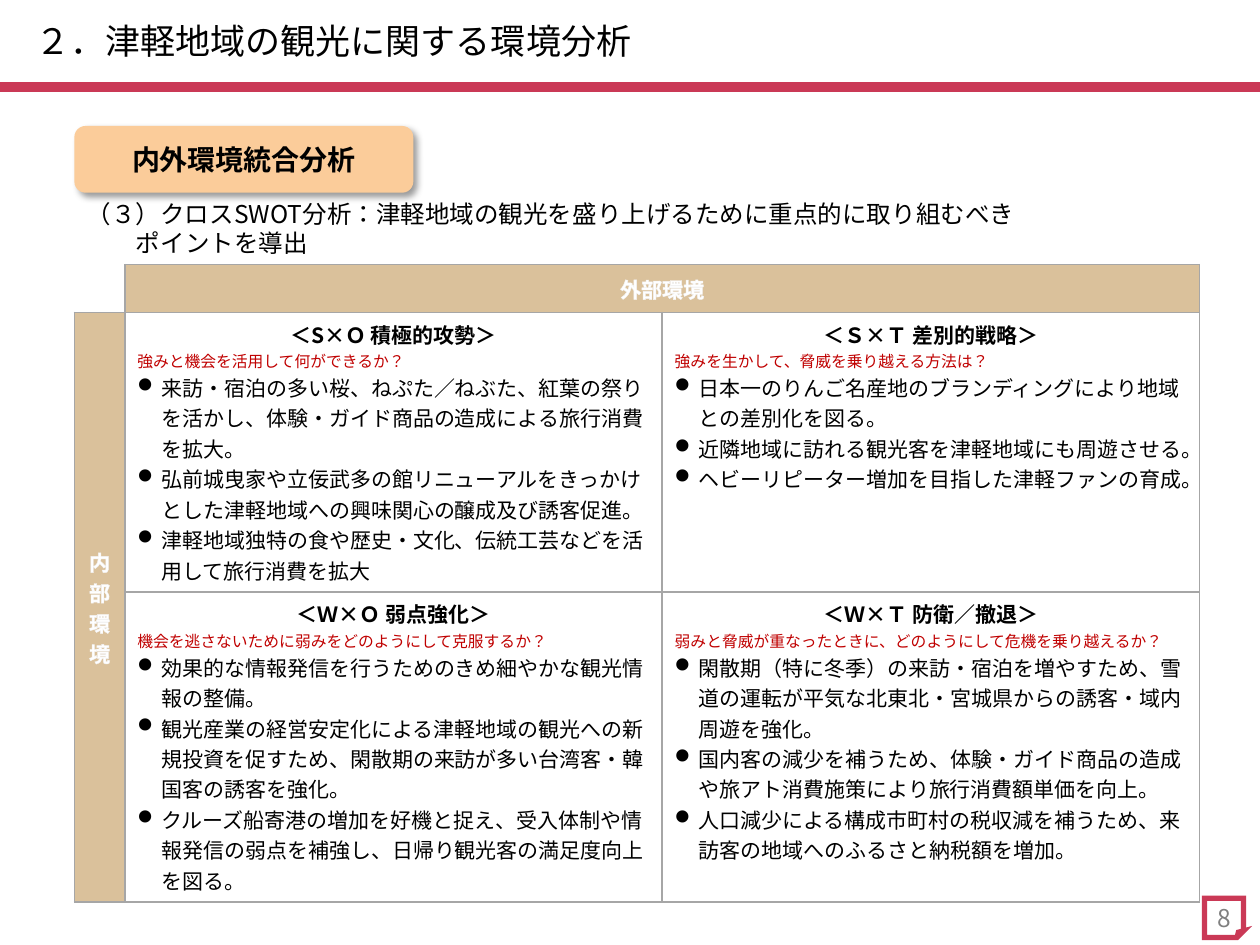
from lxml import etree
from pptx import Presentation
from pptx.dml.color import RGBColor
from pptx.enum.shapes import MSO_CONNECTOR, MSO_SHAPE
from pptx.enum.text import MSO_ANCHOR, PP_ALIGN
from pptx.oxml.ns import qn
from pptx.util import Inches, Pt

CENTER, LEFT = PP_ALIGN.CENTER, PP_ALIGN.LEFT
MIDDLE, TOP = MSO_ANCHOR.MIDDLE, MSO_ANCHOR.TOP
ROUNDED, FOLDED = MSO_SHAPE.ROUNDED_RECTANGLE, MSO_SHAPE.FOLDED_CORNER
STRAIGHT = MSO_CONNECTOR.STRAIGHT
FONT = "Noto Sans CJK JP"
RED, TAN, GREY = "CA3956", "DAC19B", "A6A6A6"

# Each quadrant: heading, question, points
QUADRANTS = [
    [("＜S×Ｏ 積極的攻勢＞", "強みと機会を活用して何ができるか？", [
        "来訪・宿泊の多い桜、ねぷた／ねぶた、紅葉の祭りを活かし、体験・ガイド商品の造成による旅行消費を拡大。",
        "弘前城曳家や立佞武多の館リニューアルをきっかけとした津軽地域への興味関心の醸成及び誘客促進。",
        "津軽地域独特の食や歴史・文化、伝統工芸などを活用して旅行消費を拡大"]),
     ("＜Ｓ×Ｔ 差別的戦略＞", "強みを生かして、脅威を乗り越える方法は？", [
         "日本一のりんご名産地のブランディングにより地域との差別化を図る。",
         "近隣地域に訪れる観光客を津軽地域にも周遊させる。",
         "ヘビーリピーター増加を目指した津軽ファンの育成。"])],
    [("＜Ｗ×Ｏ 弱点強化＞", "機会を逃さないために弱みをどのようにして克服するか？", [
        "効果的な情報発信を行うためのきめ細やかな観光情報の整備。",
        "観光産業の経営安定化による津軽地域の観光への新規投資を促すため、閑散期の来訪が多い台湾客・韓国客の誘客を強化。",
        "クルーズ船寄港の増加を好機と捉え、受入体制や情報発信の弱点を補強し、日帰り観光客の満足度向上を図る。"]),
     ("＜Ｗ×Ｔ 防衛／撤退＞", "弱みと脅威が重なったときに、どのようにして危機を乗り越えるか？", [
         "閑散期（特に冬季）の来訪・宿泊を増やすため、雪道の運転が平気な北東北・宮城県からの誘客・域内周遊を強化。",
         "国内客の減少を補うため、体験・ガイド商品の造成や旅アト消費施策により旅行消費額単価を向上。",
         "人口減少による構成市町村の税収減を補うため、来訪客の地域へのふるさと納税額を増加。"])],
]


def color(value):
    return RGBColor.from_string(value)


def add_xml(parent, tag, **attributes):
    return etree.SubElement(parent, qn(tag), attributes)


def add_line(parent, tag, value, points):
    line = add_xml(parent, tag, w=str(Pt(points)))
    add_xml(add_xml(line, "a:solidFill"), "a:srgbClr", val=value)


def write(para, text, size, value="000000", bold=False, align=LEFT, outline=None):
    para.text = text
    para.alignment = align
    font = para.font
    if outline:
        add_line(font._element, "a:ln", outline, 0.25)
    font.size, font.bold, font.name = Pt(size), bold, FONT
    font.color.rgb = color(value)
    add_xml(font._element, "a:ea", typeface=FONT)
    for span in para.runs:
        properties = span._r.get_or_add_rPr()
        properties.set("lang", "ja-JP")
        properties.set("altLang", "en-US")


def set_indent(para, left, first=0):
    properties = para._p.get_or_add_pPr()
    properties.set("marL", str(Inches(left)))
    properties.set("indent", str(Inches(first)))
    return properties


def add_text_box(page, box):
    frame = page.shapes.add_textbox(*map(Inches, box)).text_frame
    frame.word_wrap = True
    return frame


def add_title(page, box, text):
    title = page.shapes.title
    title.left, title.top, title.width, title.height = map(Inches, box)
    title.text_frame.vertical_anchor = MIDDLE
    para = title.text_frame.paragraphs[0]
    para.line_spacing = 0.9
    write(para, text, 20)


def add_rule(page, top, width):
    rule = page.shapes.add_connector(STRAIGHT, 0, Inches(top), Inches(width), Inches(top))
    rule.line.color.rgb, rule.line.width = color(RED), Pt(6)
    add_xml(rule._element.spPr, "a:effectLst")


def add_page_number(page, icon_box, text_box, number):
    icon = page.shapes.add_shape(FOLDED, *map(Inches, icon_box))
    icon.shadow.inherit = False
    icon.fill.background()
    icon.line.color.rgb, icon.line.width = color(RED), Pt(3)
    add_xml(icon._element.spPr.find(qn("a:ln")), "a:miter", lim="800000")
    frame = add_text_box(page, text_box)
    frame.vertical_anchor = MIDDLE
    write(frame.paragraphs[0], number, 14, "808080", align=CENTER)


def add_section_label(page, box, text):
    label = page.shapes.add_shape(ROUNDED, *map(Inches, box))
    label.fill.solid()
    label.fill.fore_color.rgb = color("FBCC9A")
    label.line.fill.background()
    label.shadow.inherit = False
    effects = label._element.spPr.find(qn("a:effectLst"))
    shadow = add_xml(effects, "a:outerShdw", blurRad=str(Pt(4)), dist=str(Pt(3)),
                     dir=str(45 * 60000), algn="tl", rotWithShape="0")
    add_xml(add_xml(shadow, "a:srgbClr", val="000000"), "a:alpha", val="40000")
    label.text_frame.vertical_anchor = MIDDLE
    write(label.text_frame.paragraphs[0], text, 16, bold=True, align=CENTER)


def add_lead(page, box, first, second):
    frame = add_text_box(page, box)
    write(frame.paragraphs[0], first, 14)
    para = frame.add_paragraph()
    set_indent(para, 0.39)
    write(para, second, 14)


def style_cell(cell, fill=None, outer=GREY):
    properties = cell._tc.get_or_add_tcPr()
    for tag, value in (("a:lnL", outer), ("a:lnR", GREY), ("a:lnT", outer), ("a:lnB", GREY)):
        add_line(properties, tag, value, 1)
    if fill:
        cell.fill.solid()
        cell.fill.fore_color.rgb = color(fill)
    else:
        cell.fill.background()
    cell.text_frame.paragraphs[0].font.size = Pt(12)
    add_xml(cell.text_frame.paragraphs[0]._p, "a:endParaRPr", sz="1200")


def fill_axis(cell, text):
    cell.vertical_anchor = MIDDLE
    write(cell.text_frame.paragraphs[0], text, 12, "FFFFFF", True, CENTER, outline="F2F2F2")


def turn_vertical(cell):
    cell._tc.get_or_add_tcPr().set("vert", "eaVert")
    cell._tc.txBody.find(qn("a:bodyPr")).set("vert", "eaVert")


def fill_quadrant(cell, heading, question, points):
    cell.vertical_anchor = TOP
    frame = cell.text_frame
    write(frame.paragraphs[0], heading, 12, bold=True, align=CENTER)
    write(frame.add_paragraph(), question, 9, "C00000")
    for point in points:
        para = frame.add_paragraph()
        properties = set_indent(para, 0.19, -0.19)
        add_xml(properties, "a:buFont", typeface="Wingdings", charset="2")
        add_xml(properties, "a:buChar", char="l")
        write(para, point, 12)


def add_cross_table(page, box, side, rows):
    left, top, width = box
    columns = [side] + [(width - side) / 2] * 2
    table = page.shapes.add_table(len(rows), len(columns),
                                  *map(Inches, (left, top, width, sum(rows)))).table
    table.first_row = table.horz_banding = False
    for column, column_width in zip(table.columns, columns):
        column.width = Inches(column_width)
    for row, height in zip(table.rows, rows):
        row.height = Inches(height)
    for i in range(len(rows)):
        for j in range(len(columns)):
            is_corner = i == j == 0
            is_axis = (i == 0) != (j == 0)
            style_cell(table.cell(i, j), TAN if is_axis else None,
                       "FFFFFF" if is_corner else GREY)
    table.cell(0, 1).merge(table.cell(0, 2))
    table.cell(1, 0).merge(table.cell(2, 0))
    fill_axis(table.cell(0, 1), "外部環境")
    fill_axis(table.cell(1, 0), "内部環境")
    for i in (1, 2):
        turn_vertical(table.cell(i, 0))
    for i, quadrants in enumerate(QUADRANTS, 1):
        for j, quadrant in enumerate(quadrants, 1):
            fill_quadrant(table.cell(i, j), *quadrant)


def main():
    deck = Presentation()
    deck.slide_width, deck.slide_height = Inches(10), Inches(7.5)
    page = deck.slides.add_slide(deck.slide_layouts[5])
    add_rule(page, 0.69, 10)
    add_title(page, (0.18, 0.08, 6.48, 0.53), "２．津軽地域の観光に関する環境分析")
    add_page_number(page, (9.56, 7.13, 0.31, 0.31), (9.45, 7.08, 0.54, 0.4), "8")
    add_cross_table(page, (0.59, 2.1, 8.93), 0.4, (0.38, 2.22, 2.46))
    add_section_label(page, (0.59, 1, 2.69, 0.53), "内外環境統合分析")
    add_lead(page, (0.59, 1.53, 8.82, 0.57),
             "（３）クロスSWOT分析：津軽地域の観光を盛り上げるために重点的に取り組むべき",
             "ポイントを導出")
    deck.save("out.pptx")


if __name__ == "__main__":
    main()
